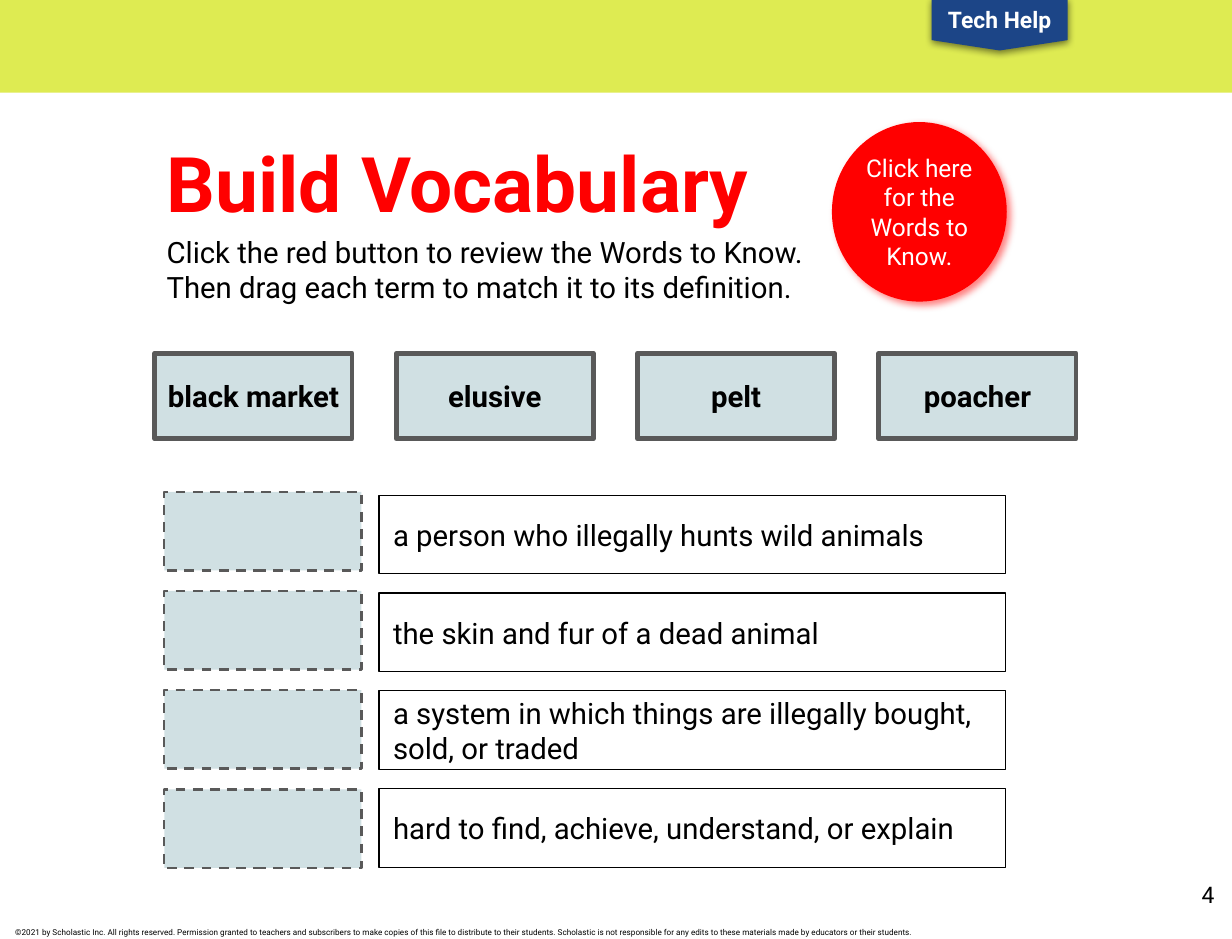
from lxml import etree
from pptx import Presentation, util as u
from pptx.dml.color import RGBColor
from pptx.enum import dml, shapes, text
from pptx.oxml.ns import qn

# Content
TITLE = "Build Vocabulary"
GUIDE = ("Click the red button to review the Words to Know.\v"
         "Then drag each term to match it to its definition.")
BUTTON = "Click here for the Words to Know."
HELP = "Tech Help"
TERMS = ["black market", "elusive", "pelt", "poacher"]
MEANINGS = [
    "a person who illegally hunts wild animals",
    "the skin and fur of a dead animal",
    "a system in which things are illegally bought, sold, or traded",
    "hard to find, achieve, understand, or explain",
]
PAGE = "4"
RIGHTS = ("©2021 by Scholastic Inc. All rights reserved. Permission granted to "
          "teachers and subscribers to make copies of this file to distribute to "
          "their students. Scholastic is not responsible for any edits to these "
          "materials made by educators or their students.")

# Format
WIDE, HIGH = 10.5, 8
HEX = {"lime": "DEEB52", "navy": "1C4587", "red": "FF0000", "pale": "D0E0E3",
       "gray": "595959", "black": "000000", "white": "FFFFFF"}
SHAPE = shapes.MSO_SHAPE
TOP, MID = text.MSO_ANCHOR.TOP, text.MSO_ANCHOR.MIDDLE
LEFT, MIDDLE, RIGHT = text.PP_ALIGN.LEFT, text.PP_ALIGN.CENTER, text.PP_ALIGN.RIGHT

deck = Presentation()
deck.slide_width, deck.slide_height = u.Inches(WIDE), u.Inches(HIGH)
slide = deck.slides.add_slide(deck.slide_layouts[5])


def rgb(name):
    return RGBColor.from_string(HEX[name])


def write(part, words, size, color="black", bold=False, align=LEFT, anchor=MID, pad=0.12):
    frame = part.text_frame
    frame.text = words
    look = {"word_wrap": True, "auto_size": text.MSO_AUTO_SIZE.NONE,
            "vertical_anchor": anchor}
    look.update({"margin_" + side: u.Inches(pad)
                 for side in ("left", "top", "right", "bottom")})
    for key, value in look.items():
        setattr(frame, key, value)
    para = frame.paragraphs[0]
    para.alignment = align
    for run in para.runs:
        for key, value in {"name": "Roboto", "size": u.Pt(size), "bold": bold}.items():
            setattr(run.font, key, value)
        run.font.color.rgb = rgb(color)


def draw(kind, box, fill=None, line=None, width=1, dash=False):
    part = slide.shapes.add_shape(kind, *map(u.Inches, box))
    part.shadow.inherit = False
    if fill:
        part.fill.solid()
        part.fill.fore_color.rgb = rgb(fill)
    else:
        part.fill.background()
    if line:
        part.line.color.rgb = rgb(line)
        part.line.width = u.Pt(width)
        if dash:
            part.line.dash_style = dml.MSO_LINE.DASH
    else:
        part.line.fill.background()
    return part


def shade(part, color, gap, angle):
    glow = etree.SubElement(
        part.element.spPr.find(qn("a:effectLst")), qn("a:outerShdw"),
        blurRad=str(u.Pt(4.5)), dist=str(u.Pt(gap)), dir=str(angle * 60000),
        algn="bl", rotWithShape="0")
    tone = etree.SubElement(glow, qn("a:srgbClr"), val=HEX[color])
    etree.SubElement(tone, qn("a:alpha"), val="50000")


def label(box, *words, **look):
    write(slide.shapes.add_textbox(*map(u.Inches, box)), *words, **look)


# Top band and help tab
draw(SHAPE.RECTANGLE, (0, -0.01, WIDE, 0.8), "lime")
tab = draw(SHAPE.FLOWCHART_OFFPAGE_CONNECTOR, (7.94, -0.01, 1.16, 0.44), "navy")
shade(tab, "black", 1.5, 90)
write(tab, HELP, 14, "white", True, MIDDLE, pad=0.1)

# Title and guide
head = slide.shapes.title
for key, value in zip(("left", "top", "width", "height"), (1.3, 1.04, 5.48, 0.89)):
    setattr(head, key, u.Inches(value))
write(head, TITLE, 47, "red", True, anchor=TOP)
label((1.3, 1.85, 6.24, 0.89), GUIDE, 18)

# Red button
disc = draw(SHAPE.OVAL, (7.09, 1.04, 1.49, 1.53), "red")
shade(disc, "red", 3, 43)
write(disc, BUTTON, 15, "white", align=MIDDLE, pad=0)

# Definitions, each with an empty slot
CARD, ROW = 1.68, 0.67
for i, words in enumerate(MEANINGS):
    draw(SHAPE.RECTANGLE, (1.4, 4.19 + i * 0.845, CARD, ROW), "pale", "gray", 1.5, True)
    cell = draw(SHAPE.RECTANGLE, (3.23, 4.22 + i * 0.833, 5.34, ROW), None, "black", 0.75)
    write(cell, words, 18)

# Term cards
for i, term in enumerate(TERMS):
    card = draw(SHAPE.RECTANGLE, (1.32 + i * 2.057, 3.01, CARD, 0.73), "pale", "gray", 3)
    write(card, term, 18, bold=True, align=MIDDLE, pad=0.1)

# Foot
label((9.83, 7.39, 0.63, 0.61), PAGE, 14, align=RIGHT, anchor=TOP, pad=0.11)
label((0.13, 7.9, 8.77, 0.1), RIGHTS, 5, anchor=TOP, pad=0)

deck.save("out.pptx")
